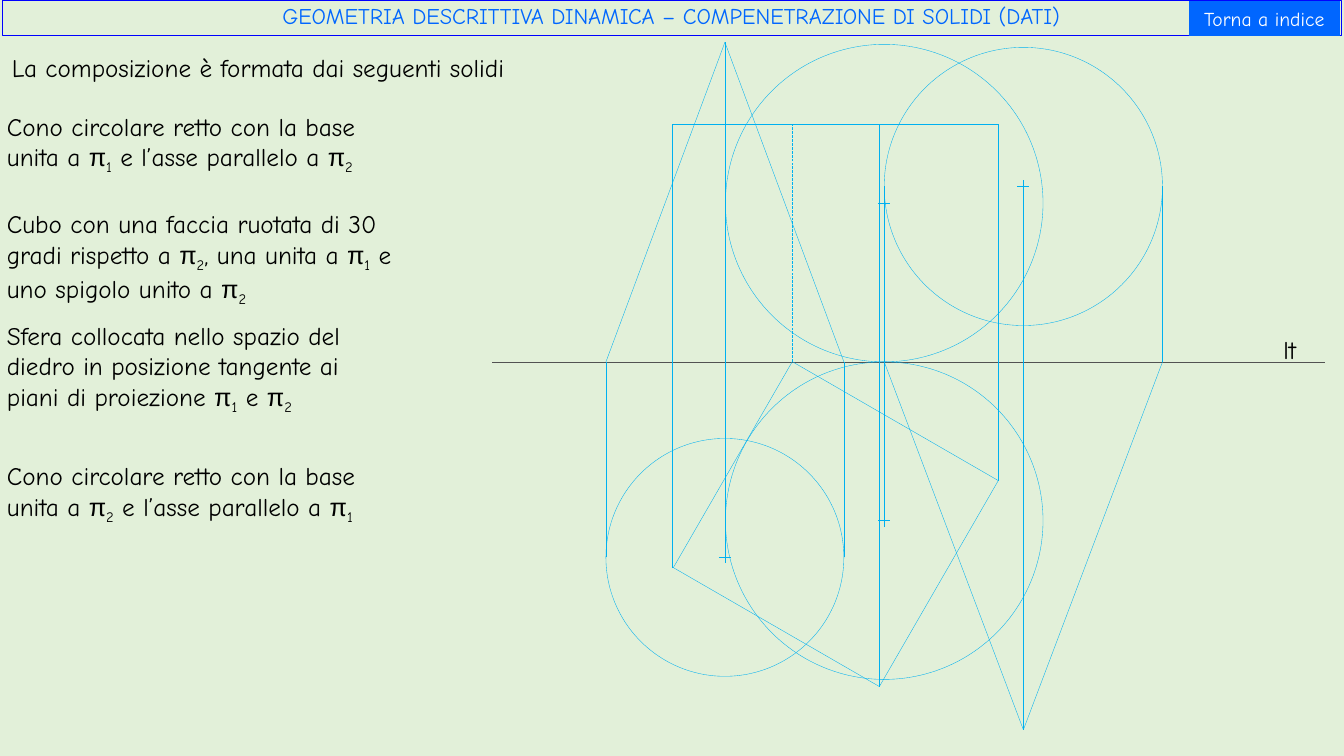
from lxml import etree
from pptx import Presentation
from pptx import util as u
from pptx.dml.color import RGBColor
from pptx.enum import dml, shapes, text
from pptx.oxml import ns

# Content
TITLE = "GEOMETRIA DESCRITTIVA DINAMICA – COMPENETRAZIONE DI SOLIDI (DATI)"
BUTTON = "Torna a indice"
GROUND_LABEL = "lt"
# left, top, width, height, text; the digit after each π is a subscript
NOTES = [
    (0.02, 0.47, 6.13, 0.4, "La composizione è formata dai seguenti solidi"),
    (-0.03, 1.05, 4.12, 0.71,
     "Cono circolare retto con la base unita a π1 e l’asse parallelo a π2"),
    (-0.03, 2.02, 4.04, 1.01,
     "Cubo con una faccia ruotata di 30 gradi rispetto a π2, una unita a π1 e "
     "uno spigolo unito a π2"),
    (-0.03, 3.13, 3.53, 1.31,
     "Sfera collocata nello spazio del diedro in posizione tangente ai piani "
     "di proiezione π1 e π2"),
    (-0.03, 4.52, 4.12, 0.71,
     "Cono circolare retto con la base unita a π2 e l’asse parallelo a π1"),
]
COLORS = {"page": "E2F0D9", "frame": "0000FF", "accent": "0066FF",
          "solid": "00B0F0", "ground": "525252", "ink": "000000",
          "white": "FFFFFF"}
FONT, SYMBOL_FONT = "Comic Neue", "Arial"

# Geometry of the drawing, in inches
GROUND = 3.59
FLOOR_CONE = {"x": 7.19, "y": 5.53, "radius": 1.18, "apex": 0.42}
WALL_CONE = {"x": 10.15, "y": 1.85, "radius": 1.38, "apex": 7.24}
SPHERE = {"x": 8.77, "radius": 1.575}
CUBE = {"x": 8.29, "y": 5.2, "side": 2.36, "angle": 30}
CUBE_EDGES = [(6.67, 5.64), (8.72, 6.82), (9.9, 4.77)]  # x, depth on the plan
HIDDEN_EDGE = 7.86
TICK = 0.06

deck = Presentation()
deck.slide_width, deck.slide_height = u.Inches(13.33), u.Inches(7.5)
page = deck.slides.add_slide(deck.slide_layouts[5])
page.background.fill.solid()
page.background.fill.fore_color.rgb = RGBColor.from_string(COLORS["page"])


def write(box, content, size=18, color="ink", align=text.PP_ALIGN.LEFT,
          anchor=text.MSO_ANCHOR.TOP, spacing=None, fit=False):
    frame = box.text_frame
    frame.word_wrap = True
    frame.vertical_anchor = anchor
    frame.auto_size = (text.MSO_AUTO_SIZE.SHAPE_TO_FIT_TEXT if fit
                       else text.MSO_AUTO_SIZE.NONE)
    para = frame.paragraphs[0]
    para.alignment = align
    para.line_spacing = spacing
    first, *others = content.split("π")
    pieces = [(first, FONT, False)]
    for other in others:
        pieces += [("π", SYMBOL_FONT, False), (other[0], FONT, True),
                   (other[1:], FONT, False)]
    for words, font, subscript in pieces:
        if not words:
            continue
        span = para.add_run()
        span.text = words
        span.font.name, span.font.size = font, u.Pt(size)
        span.font.color.rgb = RGBColor.from_string(COLORS[color])
        if subscript:
            span._r.get_or_add_rPr().set("baseline", "-25000")


def place(box, left, top, width, height):
    box.left, box.top = u.Inches(left), u.Inches(top)
    box.width, box.height = u.Inches(width), u.Inches(height)


def outline(item, color="solid"):
    item.line.color.rgb = RGBColor.from_string(COLORS[color])
    item.line.width = u.Pt(0.25)


def segment(x1, y1, x2, y2, color="solid", dashed=False):
    line = page.shapes.add_connector(shapes.MSO_CONNECTOR.STRAIGHT,
                                     *map(u.Inches, (x1, y1, x2, y2)))
    outline(line, color)
    if dashed:
        line.line.dash_style = dml.MSO_LINE.LONG_DASH
    etree.SubElement(line._element.spPr, ns.qn("a:effectLst"))


def hollow(kind, x, y, size):
    box = page.shapes.add_shape(kind, *map(u.Inches, (x - size / 2, y - size / 2,
                                                      size, size)))
    box.shadow.inherit = False
    box.fill.background()
    outline(box)
    return box


def circle(x, y, radius):
    hollow(shapes.MSO_SHAPE.OVAL, x, y, 2 * radius)
    segment(x - TICK, y, x + TICK, y)
    segment(x, y - TICK, x, y + TICK)


def cone(x, y, radius, apex):
    circle(x, y, radius)
    segment(x, GROUND, x, apex)
    segment(x, GROUND, x, y)
    for side in (x - radius, x + radius):
        segment(side, GROUND, x, apex)


def note(left, top, width, height, content):
    box = page.shapes.add_textbox(*map(u.Inches, (left, top, width, height)))
    write(box, content, fit=True)


# Title bar and index button
centred = {"align": text.PP_ALIGN.CENTER, "anchor": text.MSO_ANCHOR.MIDDLE}
title = page.shapes.title
place(title, 0.02, 0, 13.28, 0.35)
outline(title, "frame")
write(title, TITLE, size=16, color="accent", spacing=0.9, **centred)
button = page.shapes.add_shape(shapes.MSO_SHAPE.ACTION_BUTTON_CUSTOM,
                               *map(u.Inches, (11.79, 0.01, 1.5, 0.35)))
button.shadow.inherit = False
button.fill.solid()
button.fill.fore_color.rgb = RGBColor.from_string(COLORS["accent"])
button.line.fill.background()
write(button, BUTTON, size=14, color="white", **centred)

# Ground line
segment(4.88, GROUND, 13.14, GROUND, color="ground")
note(12.63, 3.27, 0.62, 0.4, GROUND_LABEL)

# Cones, with the projectors of their base circles
cone(**FLOOR_CONE)
cone(**WALL_CONE)
for sign in (-1, 1):
    side = FLOOR_CONE["x"] + sign * FLOOR_CONE["radius"]
    segment(side, FLOOR_CONE["y"], side, GROUND)
right = WALL_CONE["x"] + WALL_CONE["radius"]
segment(right, WALL_CONE["y"], right, GROUND)

# Sphere: tangent to the ground line in both views
x, radius = SPHERE["x"], SPHERE["radius"]
for centre in (GROUND - radius, GROUND + radius):
    circle(x, centre, radius)
segment(x, WALL_CONE["y"], x, GROUND)
segment(x, GROUND + radius + TICK, x, GROUND - radius - TICK)

# Cube: rotated plan, projectors and elevation
plan = hollow(shapes.MSO_SHAPE.RECTANGLE, CUBE["x"], CUBE["y"], CUBE["side"])
plan.rotation = CUBE["angle"]
top = GROUND - CUBE["side"]
for edge, depth in CUBE_EDGES:
    segment(edge, GROUND, edge, depth)
    segment(edge, GROUND, edge, top)
segment(CUBE_EDGES[0][0], top, CUBE_EDGES[-1][0], top)
segment(HIDDEN_EDGE, GROUND, HIDDEN_EDGE, top, dashed=True)

# Descriptions of the solids
for entry in NOTES:
    note(*entry)

deck.save("out.pptx")
